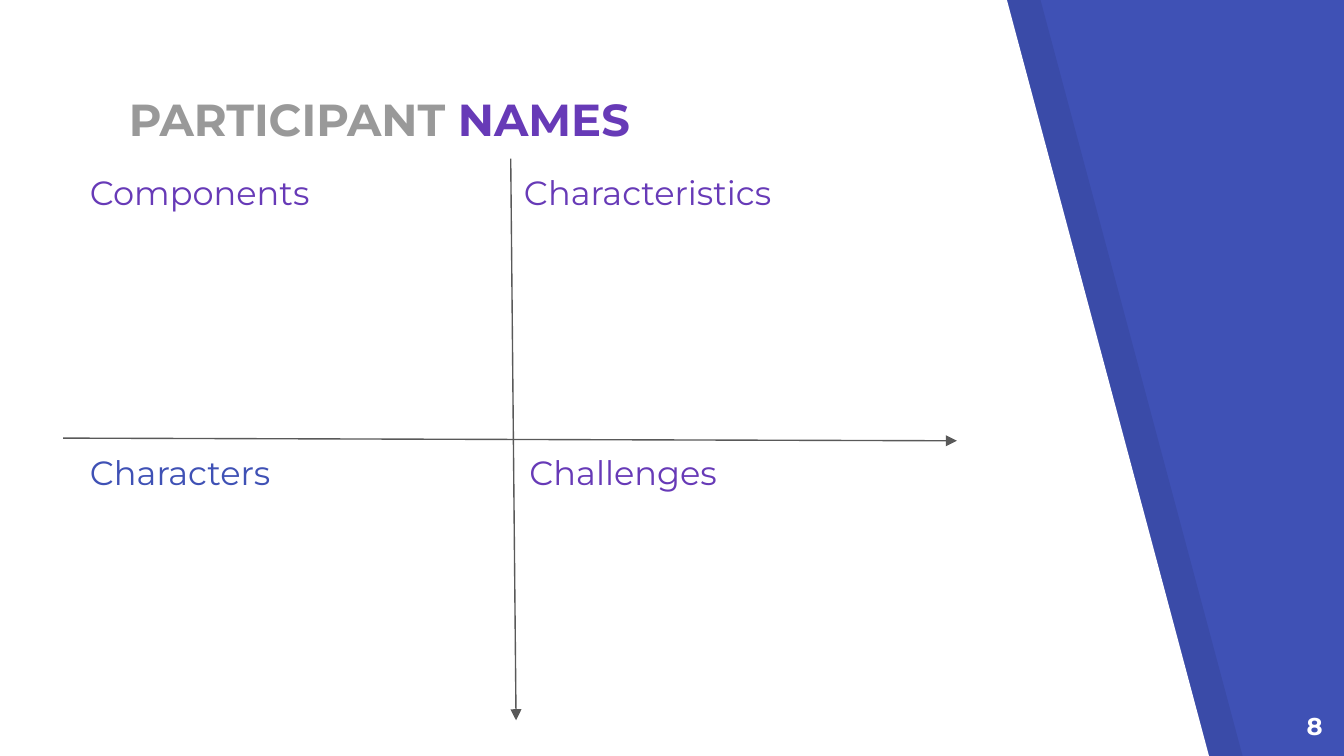
"""Build the participant names slide with its four labelled quadrants."""
from typing import NamedTuple

from lxml import etree
from pptx import Presentation
from pptx import util as u
from pptx.dml.color import RGBColor
from pptx.enum import shapes, text
from pptx.oxml import ns

COLORS = {
    "blue": "3F51B5",
    "purple": "673AB7",
    "gray": "999999",
    "axis": "595959",
    "white": "FFFFFF",
    "black": "000000",
}
FONT = "Montserrat"
SLIDE_WIDTH = 10
SLIDE_HEIGHT = SLIDE_WIDTH * 9 / 16
PANEL_TOP, PANEL_BOTTOM = -0.01, 5.64
PANEL_WIDTH, PANEL_SLANT = 9, 1.51


class Panel(NamedTuple):
    left: float
    color: str
    alpha: int


class Axis(NamedTuple):
    start: tuple[float, float]
    end: tuple[float, float]


class Label(NamedTuple):
    box: tuple[float, float, float, float]
    words: tuple[tuple[str, str], ...]
    size: int = 18
    bold: bool = False
    align: text.PP_ALIGN = text.PP_ALIGN.LEFT
    anchor: text.MSO_ANCHOR = text.MSO_ANCHOR.TOP


PANELS = [Panel(0.25, "black", 7), Panel(0, "white", 100)]
AXES = [Axis((3.8, 1.18), (3.84, 5.36)), Axis((0.47, 3.26), (7.12, 3.28))]
LABELS = [
    Label((0.86, 0.73, 5.25, 0.45), (("PARTICIPANT ", "gray"), ("NAMES", "purple")),
          24, True, anchor=text.MSO_ANCHOR.BOTTOM),
    Label((9.34, 5.19, 0.6, 0.43), (("8", "white"),), 13, True, text.PP_ALIGN.RIGHT),
    Label((0.57, 1.18, 5.85, 0.36), (("Components", "purple"),)),
    Label((3.8, 1.18, 5.86, 0.36), (("Characteristics", "purple"),)),
    Label((3.84, 3.26, 2.98, 1.58), (("Challenges", "purple"),)),
    Label((0.57, 3.26, 2.98, 1.58), (("Characters", "blue"),)),
]


def rgb(name: str) -> RGBColor:
    return RGBColor.from_string(COLORS[name])


def draw_panel(slide, panel: Panel) -> None:
    right = panel.left + PANEL_WIDTH
    corners = [
        (panel.left, PANEL_TOP),
        (panel.left, PANEL_BOTTOM),
        (right, PANEL_BOTTOM),
        (right - PANEL_SLANT, PANEL_TOP),
    ]
    points = [(u.Inches(x), u.Inches(y)) for x, y in corners]
    builder = slide.shapes.build_freeform(*points[0])
    builder.add_line_segments(points[1:], close=True)
    shape = builder.convert_to_shape()
    shape.shadow.inherit = False
    shape.line.fill.background()
    shape.fill.solid()
    shape.fill.fore_color.rgb = rgb(panel.color)
    if panel.alpha < 100:
        color = shape.element.spPr.find(".//" + ns.qn("a:srgbClr"))
        etree.SubElement(color, ns.qn("a:alpha"), val=str(panel.alpha * 1000))


def draw_axis(slide, axis: Axis) -> None:
    ends = [u.Inches(value) for value in axis.start + axis.end]
    arrow = slide.shapes.add_connector(shapes.MSO_CONNECTOR.STRAIGHT, *ends)
    arrow.line.color.rgb = rgb("axis")
    arrow.line.width = u.Pt(0.75)
    properties = arrow.element.spPr
    etree.SubElement(properties.find(ns.qn("a:ln")), ns.qn("a:tailEnd"), type="triangle")
    etree.SubElement(properties, ns.qn("a:effectLst"))


def draw_label(slide, label: Label) -> None:
    frame = slide.shapes.add_textbox(*map(u.Inches, label.box)).text_frame
    frame.word_wrap = True
    frame.vertical_anchor = label.anchor
    frame.margin_left = frame.margin_right = u.Inches(0.1)
    frame.margin_top = frame.margin_bottom = u.Inches(0.1)
    paragraph = frame.paragraphs[0]
    paragraph.alignment = label.align
    for word, color in label.words:
        run = paragraph.add_run()
        run.text = word
        run.font.name = FONT
        run.font.size = u.Pt(label.size)
        run.font.bold = label.bold
        run.font.color.rgb = rgb(color)


def main() -> None:
    deck = Presentation()
    deck.slide_width = u.Inches(SLIDE_WIDTH)
    deck.slide_height = u.Inches(SLIDE_HEIGHT)
    slide = deck.slides.add_slide(deck.slide_layouts[6])
    slide.background.fill.solid()
    slide.background.fill.fore_color.rgb = rgb("blue")
    for panel in PANELS:
        draw_panel(slide, panel)
    for axis in AXES:
        draw_axis(slide, axis)
    for label in LABELS:
        draw_label(slide, label)
    deck.save("out.pptx")


if __name__ == "__main__":
    main()
